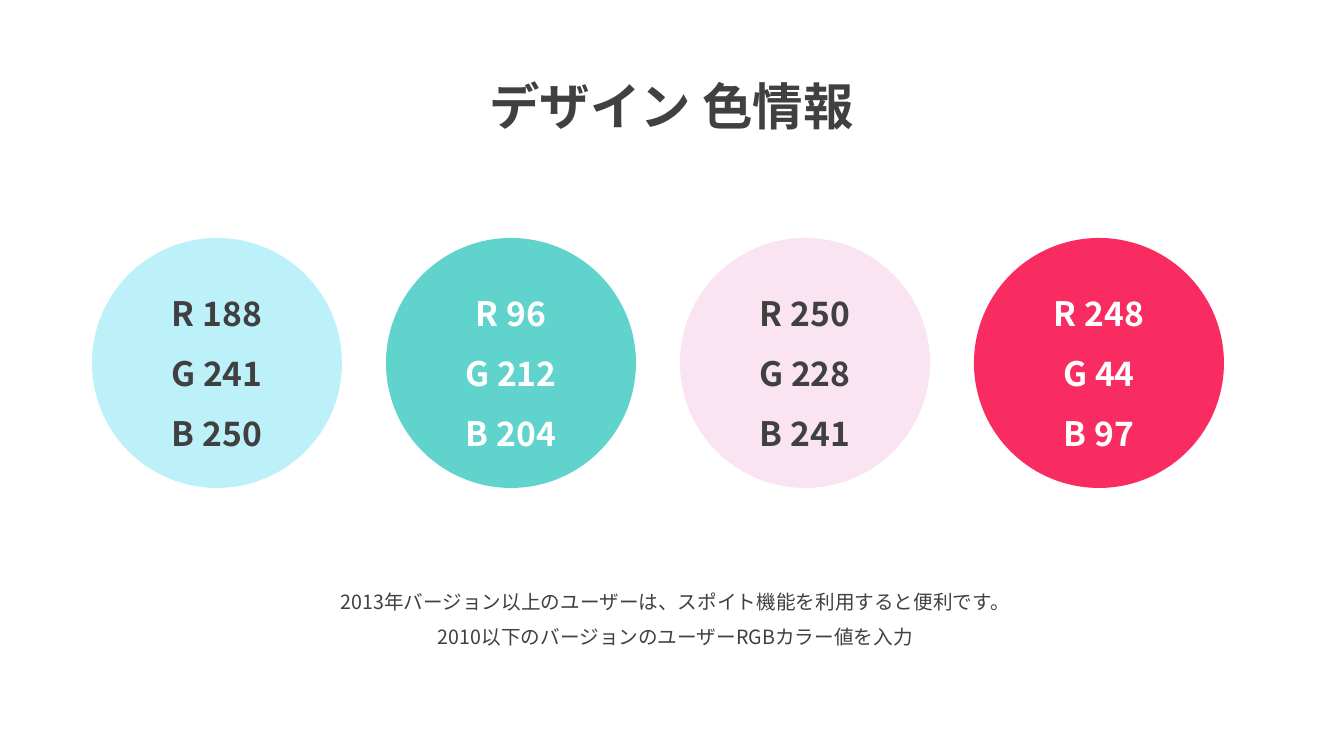
import pptx
import pptx.dml.color
import pptx.enum.shapes
import pptx.enum.text
import pptx.oxml
import pptx.oxml.ns
import pptx.util

PX = 914400 / 100.8
FONT = "Noto Sans CJK KR"
COLORS = {
    "sky": "BCF1FA",
    "teal": "60D4CC",
    "blush": "FAE4F1",
    "crimson": "F82C61",
    "dark": "404040",
    "white": "FFFFFF",
}
SWATCHES = [("sky", "dark"), ("teal", "white"), ("blush", "dark"), ("crimson", "white")]
SWATCH_LEFT, SWATCH_TOP, SWATCH_SIZE, SWATCH_STEP = 92, 238, 250, 294
NOTE = [
    "2013年バージョン以上のユーザーは、スポイト機能を利用すると便利です。",
    "2010以下のバージョンのユーザーRGBカラー値を入力",
]


def px(length):
    return pptx.util.Emu(round(length * PX))


def rgb(name):
    return pptx.dml.color.RGBColor.from_string(COLORS[name])


def write(frame, lines, size=14, color="dark", bold=False, anchor="TOP"):
    """Fill a text frame with centred paragraphs, one for each line."""
    frame.word_wrap = True
    frame.auto_size = pptx.enum.text.MSO_AUTO_SIZE.NONE
    frame.vertical_anchor = pptx.enum.text.MSO_ANCHOR[anchor]
    for index, line in enumerate(lines):
        paragraph = frame.add_paragraph() if index else frame.paragraphs[0]
        paragraph.alignment = pptx.enum.text.PP_ALIGN.CENTER
        paragraph.line_spacing = 1.5
        run = paragraph.add_run()
        run.text = line
        run.font.size = pptx.util.Pt(size)
        run.font.bold = bold
        run.font.color.rgb = rgb(color)
        run.font.name = FONT
        east_asian = pptx.oxml.parse_xml(
            f'<a:ea {pptx.oxml.ns.nsdecls("a")} typeface="{FONT}"/>')
        run.font._element.append(east_asian)


def add_title(slide, text, left, top, width, height):
    title = slide.shapes.title
    title.left, title.top = px(left), px(top)
    title.width, title.height = px(width), px(height)
    write(title.text_frame, [text], size=36, bold=True)


def add_swatch(slide, left, fill, text_color):
    """Draw a circle labelled with the RGB values of its own fill."""
    circle = slide.shapes.add_shape(
        pptx.enum.shapes.MSO_SHAPE.OVAL,
        px(left), px(SWATCH_TOP), px(SWATCH_SIZE), px(SWATCH_SIZE))
    circle.shadow.inherit = False
    circle.fill.solid()
    circle.fill.fore_color.rgb = rgb(fill)
    circle.line.fill.background()
    labels = [f"{channel} {value}" for channel, value in zip("RGB", rgb(fill))]
    write(circle.text_frame, labels, size=24, color=text_color, bold=True, anchor="MIDDLE")


def add_note(slide, lines, left, top, width, height):
    note = slide.shapes.add_textbox(px(left), px(top), px(width), px(height))
    write(note.text_frame, lines)


def main():
    deck = pptx.Presentation()
    deck.slide_width, deck.slide_height = px(1344), px(756)
    title_only = deck.slide_layouts[5]
    slide = deck.slides.add_slide(title_only)

    add_title(slide, "デザイン 色情報", 427, 40, 489, 92)
    for index, (fill, text_color) in enumerate(SWATCHES):
        add_swatch(slide, SWATCH_LEFT + index * SWATCH_STEP, fill, text_color)
    add_note(slide, NOTE, 254, 573, 843, 78)

    deck.save("out.pptx")


if __name__ == "__main__":
    main()
